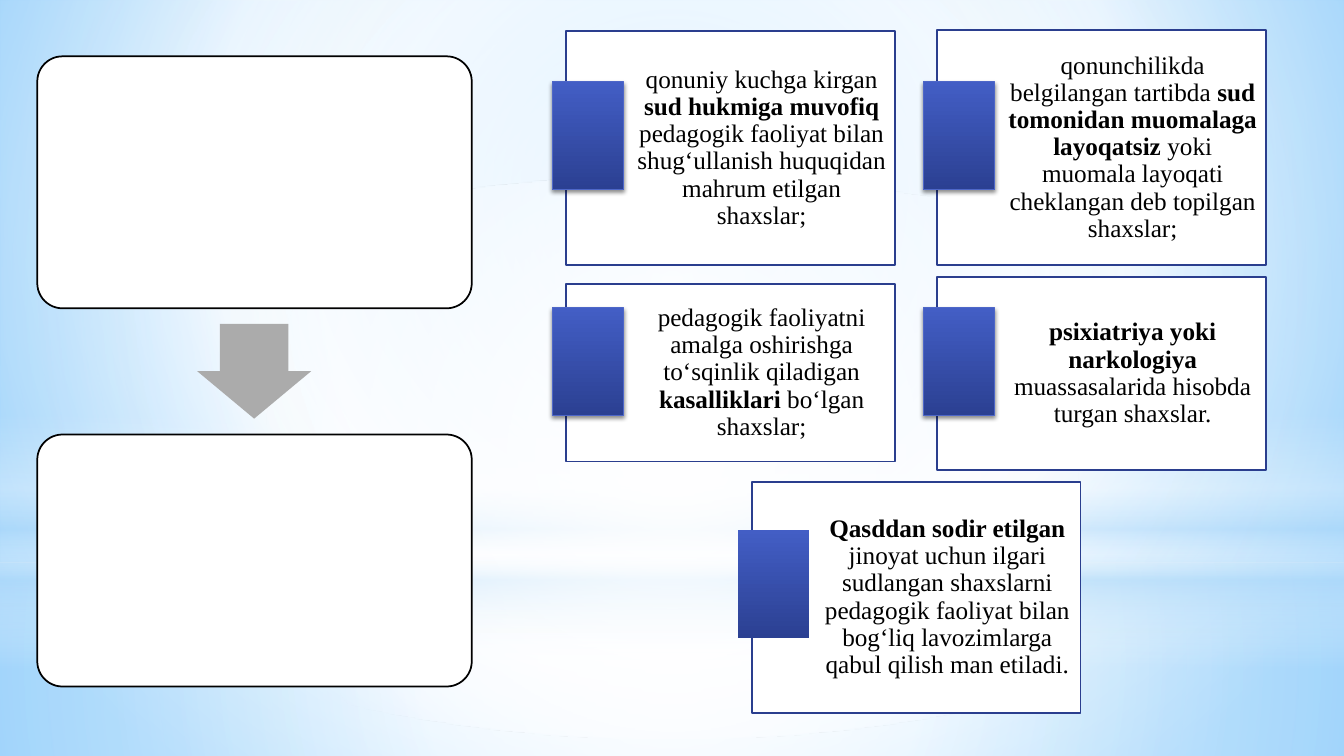
"""Build a slide about who is barred from teaching work."""
from dataclasses import dataclass
from typing import NamedTuple, Optional

from lxml.etree import SubElement
from pptx import Presentation
from pptx.dml.color import RGBColor
from pptx.enum.shapes import MSO_SHAPE
from pptx.enum.text import MSO_ANCHOR, PP_ALIGN
from pptx.oxml.ns import qn
from pptx.shapes.autoshape import Shape
from pptx.slide import Slide
from pptx.util import Cm, Pt


class Stop(NamedTuple):
    position: int
    color: str
    opacity: int = 100


class Area(NamedTuple):
    left: float
    top: float
    width: float
    height: float


class Span(NamedTuple):
    text: str
    bold: bool = False


@dataclass(frozen=True)
class Gradient:
    stops: tuple[Stop, ...]
    angle: int = 90
    focus: Optional[tuple[int, int, int, int]] = None


@dataclass(frozen=True)
class Glow:
    shape: MSO_SHAPE
    area: Area
    gradient: Gradient


@dataclass(frozen=True)
class Card:
    area: Area
    tab_top: float
    spans: tuple[Span, ...]
    raised_tab: bool = True


@dataclass(frozen=True)
class Theme:
    font: str = "Times New Roman"
    text_size: float = 18
    space_after: float = 6.3
    line_width: float = 1.25
    tab_line_width: float = 0.75
    white: str = "FFFFFF"
    black: str = "000000"
    arrow: str = "ABABAB"
    card_line: str = "2A3E8E"
    tab_line: str = "4E67C8"
    tab: Gradient = Gradient((Stop(0, "435EC5"), Stop(100, "2B4092")))
    backdrop: Gradient = Gradient(
        (Stop(0, "9ED5FF"), Stop(60, "FFFFFF"), Stop(100, "5BB9FF")),
        focus=(20, 10, 20, 60))


THEME = Theme()
WIDTH, HEIGHT = 33.87, 19.05
HORIZON = 14.17
CENTER = (50, 50, 50, 50)
CARD_WIDTH = 8.28
LEFT_COLUMN, MIDDLE_COLUMN, RIGHT_COLUMN = 14.27, 18.95, 23.62
TAB_WIDTH, TAB_HEIGHT, TAB_OVERHANG = 1.8, 2.72, 0.35
PANEL_TOPS = (1.42, 10.95)

GLOWS = (
    Glow(MSO_SHAPE.RECTANGLE, Area(0, HORIZON, WIDTH, HEIGHT - HORIZON), Gradient(
        (Stop(0, "FFFFFF", 91), Stop(37, "FFFFFF", 76), Stop(100, "B4DCFA", 79)),
        focus=CENTER)),
    Glow(MSO_SHAPE.RECTANGLE, Area(0, 0, WIDTH, HORIZON), Gradient(
        (Stop(0, "FFFFFF", 89), Stop(48, "FFFFFF", 62), Stop(100, "B4DCFA", 79)),
        focus=CENTER)),
    Glow(MSO_SHAPE.RECTANGLE, Area(0, 10.46, WIDTH, 6.35), Gradient(
        (Stop(0, "FFFFFF", 0), Stop(29, "FFFFFF", 30), Stop(45, "B4DCFA", 40),
         Stop(55, "FFFFFF", 26), Stop(65, "B4DCFA", 60), Stop(100, "FFFFFF", 0)))),
    Glow(MSO_SHAPE.OVAL, Area(0, 4.45, WIDTH, HORIZON), Gradient(
        (Stop(0, "FFFFFF"), Stop(56, "FFFFFF", 0)), focus=CENTER)),
)

CARDS = (
    Card(Area(LEFT_COLUMN, 0.79, CARD_WIDTH, 5.89), 2.06, (
        Span("qonuniy kuchga kirgan "),
        Span("sud hukmiga muvofiq ", True),
        Span("pedagogik faoliyat bilan shug‘ullanish huquqidan mahrum etilgan shaxslar;"))),
    Card(Area(RIGHT_COLUMN, 0.76, CARD_WIDTH, 5.92), 2.06, (
        Span("qonunchilikda belgilangan tartibda "),
        Span("sud tomonidan muomalaga layoqatsiz ", True),
        Span("yoki muomala layoqati cheklangan deb topilgan shaxslar;"))),
    Card(Area(LEFT_COLUMN, 7.16, CARD_WIDTH, 4.47), 7.75, (
        Span("pedagogik faoliyatni amalga oshirishga to‘sqinlik qiladigan "),
        Span("kasalliklari ", True),
        Span("bo‘lgan shaxslar;"))),
    Card(Area(RIGHT_COLUMN, 6.99, CARD_WIDTH, 4.85), 7.75, (
        Span("psixiatriya yoki narkologiya ", True),
        Span("muassasalarida hisobda turgan shaxslar."))),
    Card(Area(MIDDLE_COLUMN, 12.14, CARD_WIDTH, 5.82), 13.36, (
        Span("Qasddan sodir etilgan ", True),
        Span("jinoyat uchun ilgari sudlangan shaxslarni pedagogik faoliyat bilan "
             "bog‘liq lavozimlarga qabul qilish man etiladi.")), raised_tab=False),
)


def apply_gradient(holder: Slide | Shape, gradient: Gradient) -> None:
    fill = holder.background.fill if isinstance(holder, Slide) else holder.fill
    fill.gradient()
    element = next(holder.element.iter(qn("a:gradFill")))
    for child in list(element):
        element.remove(child)
    stops = SubElement(element, qn("a:gsLst"))
    for stop in gradient.stops:
        mark = SubElement(stops, qn("a:gs"), pos=str(stop.position * 1000))
        color = SubElement(mark, qn("a:srgbClr"), val=stop.color)
        SubElement(color, qn("a:alpha"), val=str(stop.opacity * 1000))
    if gradient.focus is None:
        SubElement(element, qn("a:lin"), ang=str(gradient.angle * 60000), scaled="0")
        return
    shade = SubElement(element, qn("a:path"), path="circle")
    edges = {side: str(value * 1000) for side, value in zip("ltrb", gradient.focus)}
    SubElement(shade, qn("a:fillToRect"), edges)


def add_box(page: Slide, kind: MSO_SHAPE, area: Area, paint: str | Gradient,
            line: Optional[str] = None, line_width: float = THEME.line_width) -> Shape:
    box = page.shapes.add_shape(kind, *(Cm(length) for length in area))
    box.shadow.inherit = False
    if isinstance(paint, Gradient):
        apply_gradient(box, paint)
    else:
        box.fill.solid()
        box.fill.fore_color.rgb = RGBColor.from_string(paint)
    if line is None:
        box.line.fill.background()
    else:
        box.line.color.rgb = RGBColor.from_string(line)
        box.line.width = Pt(line_width)
    return box


def add_shadow(box: Shape) -> None:
    effects = next(box.element.iter(qn("a:effectLst")))
    shadow = SubElement(effects, qn("a:outerShdw"), blurRad=str(Pt(3.1)),
                        dist=str(Pt(1.8)), dir="5400000", rotWithShape="0")
    color = SubElement(shadow, qn("a:srgbClr"), val=THEME.black)
    SubElement(color, qn("a:alpha"), val="45000")


def add_card(page: Slide, card: Card) -> None:
    box = add_box(page, MSO_SHAPE.RECTANGLE, card.area, THEME.white, THEME.card_line)
    frame = box.text_frame
    frame.word_wrap = True
    frame.vertical_anchor = MSO_ANCHOR.MIDDLE
    frame.margin_left = Cm(1.75)
    frame.margin_top = frame.margin_right = frame.margin_bottom = Cm(0.18)
    para = frame.paragraphs[0]
    para.alignment = PP_ALIGN.CENTER
    para.line_spacing = 0.9
    para.space_after = Pt(THEME.space_after)
    for span in card.spans:
        run = para.add_run()
        run.text = span.text
        run.font.name = THEME.font
        run.font.size = Pt(THEME.text_size)
        run.font.bold = span.bold
        run.font.color.rgb = RGBColor.from_string(THEME.black)
    tab_area = Area(card.area.left - TAB_OVERHANG, card.tab_top, TAB_WIDTH, TAB_HEIGHT)
    tab_line = THEME.tab_line if card.raised_tab else None
    tab = add_box(page, MSO_SHAPE.RECTANGLE, tab_area, THEME.tab, tab_line,
                  THEME.tab_line_width)
    if card.raised_tab:
        add_shadow(tab)


def add_panels(page: Slide) -> None:
    for top in PANEL_TOPS:
        panel = add_box(page, MSO_SHAPE.ROUNDED_RECTANGLE, Area(0.94, top, 10.95, 6.35),
                        THEME.white, THEME.black)
        panel.adjustments[0] = 0.1
    arrow = add_box(page, MSO_SHAPE.RIGHT_ARROW, Area(5.21, 7.92, 2.39, 2.87), THEME.arrow)
    arrow.rotation = 90
    arrow.adjustments[0] = 0.6
    arrow.adjustments[1] = 0.5


def main() -> None:
    deck = Presentation()
    deck.slide_width, deck.slide_height = Cm(WIDTH), Cm(HEIGHT)
    page = deck.slides.add_slide(deck.slide_layouts[6])
    apply_gradient(page, THEME.backdrop)
    for glow in GLOWS:
        add_box(page, glow.shape, glow.area, glow.gradient)
    add_panels(page)
    for card in CARDS:
        add_card(page, card)
    deck.save("out.pptx")


if __name__ == "__main__":
    main()
